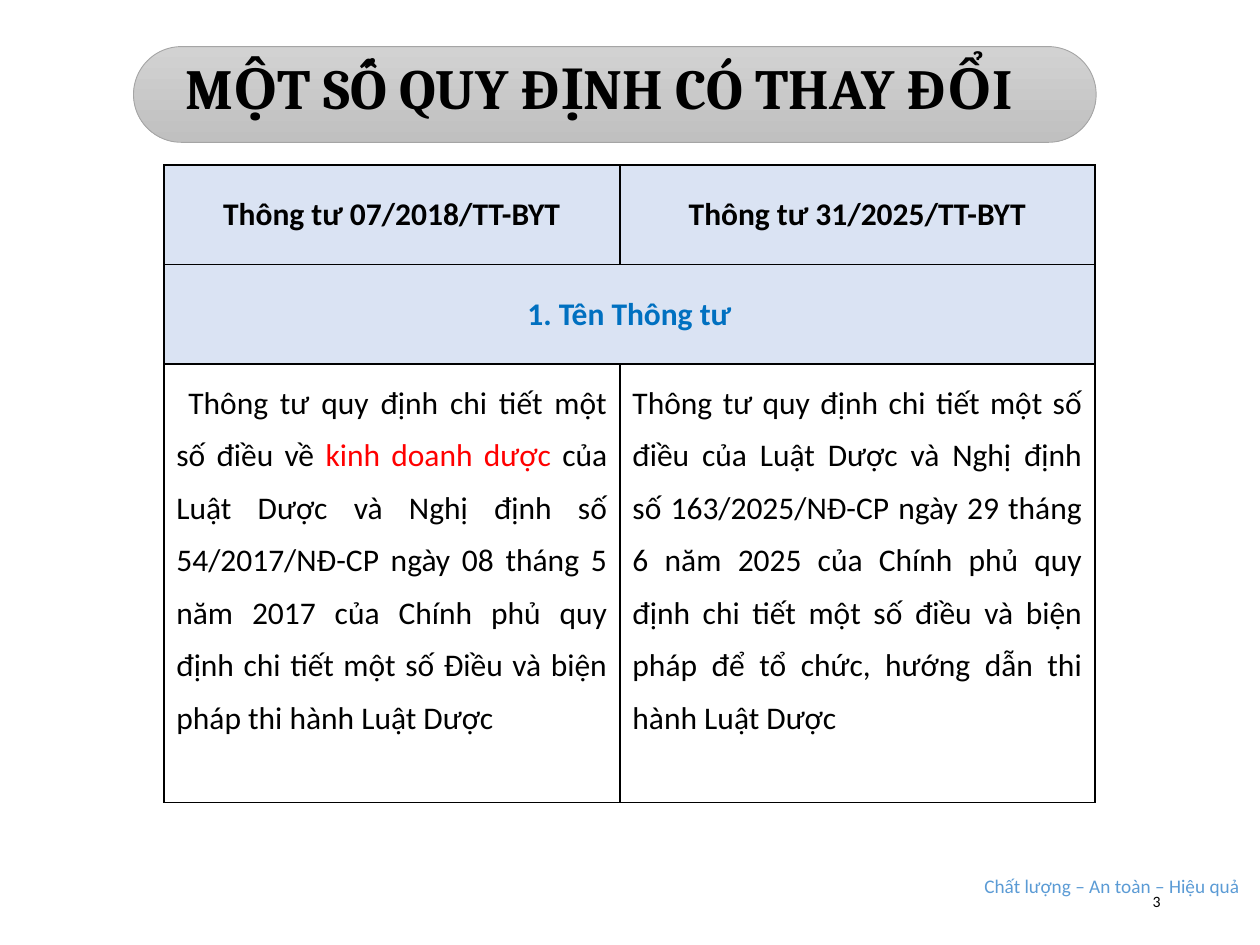
from lxml import etree
from pptx import Presentation
from pptx.dml.color import RGBColor
from pptx.enum.shapes import MSO_SHAPE
from pptx.enum.text import MSO_ANCHOR, MSO_AUTO_SIZE, PP_ALIGN
from pptx.oxml.ns import qn
from pptx.util import Inches, Pt

ROUNDED = MSO_SHAPE.ROUNDED_RECTANGLE
TOP, MIDDLE = MSO_ANCHOR.TOP, MSO_ANCHOR.MIDDLE
CENTER, RIGHT, JUSTIFY = PP_ALIGN.CENTER, PP_ALIGN.RIGHT, PP_ALIGN.JUSTIFY
NO_FIT = MSO_AUTO_SIZE.NONE

BLACK = RGBColor(0x00, 0x00, 0x00)
WHITE = RGBColor(0xFF, 0xFF, 0xFF)
RED = RGBColor(0xFF, 0x00, 0x00)
BLUE = RGBColor(0x00, 0x70, 0xC0)
SKY = RGBColor(0x5B, 0x9B, 0xD5)
PALE_BLUE = RGBColor(0xDA, 0xE3, 0xF3)
GREY = RGBColor(0xA5, 0xA5, 0xA5)
GREY_TOP = RGBColor(0xD2, 0xD2, 0xD2)
GREY_BOTTOM = RGBColor(0xC0, 0xC0, 0xC0)

COLS, ROWS = 100, 75  # slide grid


class Deck:
    """Style and current slide; lengths are grid columns and rows."""
    heading_font, body_font = "Cambria", "Calibri"

    def __init__(self):
        self.prs = Presentation()
        self.prs.slide_width, self.prs.slide_height = Inches(10), Inches(7.5)
        self.s = self.prs.slides.add_slide(self.prs.slide_layouts[5])

    def x(self, cols):
        return round(self.prs.slide_width * cols / COLS)

    def y(self, rows):
        return round(self.prs.slide_height * rows / ROWS)

    def box(self, left, top, width, height):
        return self.x(left), self.y(top), self.x(width), self.y(height)

    def add_runs(self, p, parts, size, align, bold=False, font=None):
        """Fill a paragraph with (text, colour) runs."""
        p.alignment = align
        for text, color in parts:
            r = p.add_run()
            r.text = text
            r.font.name, r.font.size = font or self.body_font, Pt(size)
            r.font.bold, r.font.color.rgb = bold, color

    def banner(self, *place):
        sp = self.s.shapes.add_shape(ROUNDED, *self.box(*place))
        sp.adjustments[0] = 0.5
        sp.shadow.inherit = False
        sp.fill.gradient()
        sp.fill.gradient_angle = 270
        stops = zip(sp.fill.gradient_stops, (GREY_TOP, GREY_BOTTOM), (0, 1))
        for stop, color, position in stops:
            stop.color.rgb, stop.position = color, position
        sp.line.color.rgb, sp.line.width = GREY, Pt(0.5)

    def title(self, text, *place):
        sp = self.s.shapes.title
        sp.left, sp.top, sp.width, sp.height = self.box(*place)
        sp.element.getparent().append(sp.element)  # in front of the banner
        tf = sp.text_frame
        tf.auto_size, tf.vertical_anchor, tf.word_wrap = NO_FIT, MIDDLE, True
        tf.paragraphs[0].line_spacing = 0.9
        self.add_runs(tf.paragraphs[0], [(text, BLACK)], 32.4, CENTER, True,
                      self.heading_font)

    def label(self, text, place, size, color, align, anchor=TOP, wrap=True):
        tf = self.s.shapes.add_textbox(*self.box(*place)).text_frame
        tf.word_wrap, tf.vertical_anchor = wrap, anchor
        self.add_runs(tf.paragraphs[0], [(text, color)], size, align)

    def table(self, left, top, widths, heights):
        place = self.box(left, top, sum(widths), sum(heights))
        table = self.s.shapes.add_table(len(heights), len(widths), *place).table
        table.first_row = table.horz_banding = False
        for column, width in zip(table.columns, widths):
            column.width = self.x(width)
        for row, height in zip(table.rows, heights):
            row.height = self.y(height)
        for cell in table.iter_cells():
            self.borders(cell)
        return table

    def borders(self, cell):
        tc_pr = cell._tc.get_or_add_tcPr()
        for side in ("a:lnL", "a:lnR", "a:lnT", "a:lnB"):
            ln = etree.SubElement(tc_pr, qn(side), w=str(Pt(1)))
            fill = etree.SubElement(ln, qn("a:solidFill"))
            etree.SubElement(fill, qn("a:srgbClr"), val=str(BLACK))

    def cell(self, cell, parts, heading=True):
        cell.fill.solid()
        cell.fill.fore_color.rgb = PALE_BLUE if heading else WHITE
        cell.vertical_anchor = MIDDLE if heading else TOP
        p = cell.text_frame.paragraphs[0]
        if not heading:
            p.line_spacing = Pt(30)
        self.add_runs(p, parts, 18, CENTER if heading else JUSTIFY, heading)


def main():
    deck = Deck()

    # Footer motto
    deck.label("Chất lượng – An toàn – Hiệu quả", (75.9, 68.9, 24.7, 2.9),
               11, SKY, CENTER, wrap=False)

    # Title on its banner
    deck.banner(10.6, 3.7, 76.4, 7.6)
    deck.title("MỘT SỐ QUY ĐỊNH CÓ THAY ĐỔI", 10.1, 3.7, 74.9, 7)

    # Comparison of the two circulars
    table = deck.table(13, 13.1, (36.2, 37.7), (7.9, 7.9, 34.8))
    for col, name in enumerate(("07/2018/TT-BYT", "31/2025/TT-BYT")):
        deck.cell(table.cell(0, col), [(f"Thông tư {name}", BLACK)])
    table.cell(1, 0).merge(table.cell(1, 1))
    deck.cell(table.cell(1, 0), [("1. Tên Thông tư", BLUE)])
    old = [
        (" Thông tư quy định chi tiết một số điều về ", BLACK),
        ("kinh doanh dược ", RED),
        ("của Luật Dược và Nghị định số 54/2017/NĐ-CP ngày 08 tháng 5 năm 2017 "
         "của Chính phủ quy định chi tiết một số Điều và biện pháp thi hành "
         "Luật Dược", BLACK),
    ]
    new = [
        ("Thông tư quy định chi tiết một số điều của Luật Dược và Nghị định "
         "số 163/2025/NĐ-CP ngày 29 tháng 6 năm 2025 của Chính phủ quy định "
         "chi tiết một số điều và biện pháp để tổ chức, hướng dẫn thi hành "
         "Luật Dược", BLACK),
    ]
    for col, parts in enumerate((old, new)):
        deck.cell(table.cell(2, col), parts, heading=False)

    # Page number
    deck.label("3", (70.6, 69.5, 22.5, 4), 9, BLACK, RIGHT, MIDDLE)

    deck.prs.save("out.pptx")


if __name__ == "__main__":
    main()
